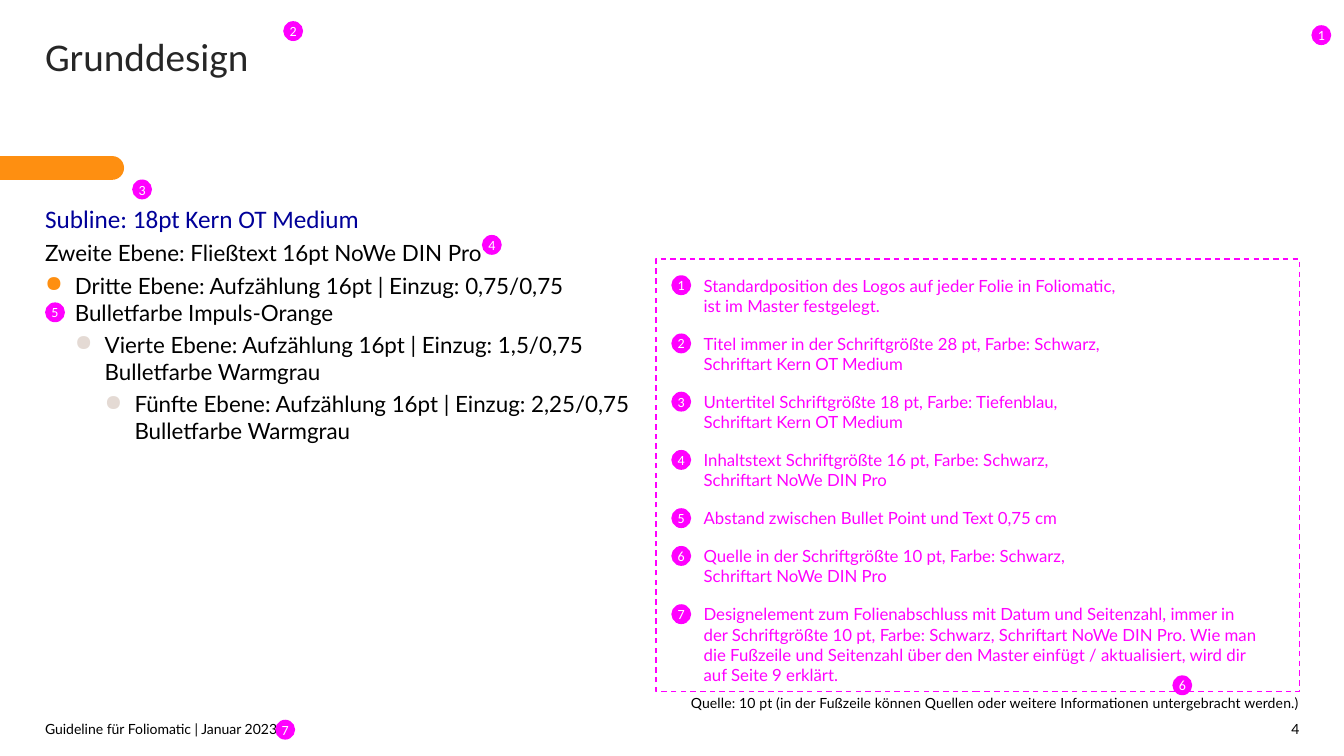
from lxml import etree
from pptx import Presentation
from pptx.dml.color import RGBColor
from pptx.enum.dml import MSO_LINE
from pptx.enum.shapes import MSO_SHAPE as Shape
from pptx.enum.text import MSO_ANCHOR as Anchor, PP_ALIGN as Align
from pptx.oxml.ns import qn
from pptx.util import Pt

COLORS = {"orange": "FE8F11", "warm_grey": "E4DAD4", "deep_blue": "000099",
          "title": "262626", "black": "000000", "white": "FFFFFF", "marker": "FF00FF"}
color = {name: RGBColor.from_string(value) for name, value in COLORS.items()}

prs = Presentation()
prs.slide_width, prs.slide_height = Pt(960), Pt(540)
slide = prs.slides.add_slide(prs.slide_layouts[6])


def add_text(box, lines, size, font, ink, anchor=Anchor.TOP, align=Align.LEFT):
    """Place text without margins; returns its paragraph."""
    area = slide.shapes.add_textbox(*[Pt(value) for value in box])
    frame = area.text_frame
    frame.word_wrap = True
    frame.vertical_anchor = anchor
    frame.margin_left = frame.margin_top = frame.margin_right = frame.margin_bottom = 0
    paragraph = frame.paragraphs[0]
    paragraph.text = lines.replace("\n", "\v")
    paragraph.alignment = align
    paragraph.font.size, paragraph.font.name = Pt(size), font
    paragraph.font.color.rgb = color[ink]
    return paragraph


def add_marker(number, left, top):
    """Numbered magenta dot."""
    dot = slide.shapes.add_shape(Shape.OVAL, Pt(left), Pt(top), Pt(14.2), Pt(14.2))
    dot.shadow.inherit = False
    dot.fill.solid()
    dot.fill.fore_color.rgb = color["marker"]
    dot.line.fill.background()
    frame = dot.text_frame
    frame.word_wrap = False
    frame.vertical_anchor = Anchor.MIDDLE
    frame.margin_left = frame.margin_top = frame.margin_right = frame.margin_bottom = 0
    label = frame.paragraphs[0]
    label.text = str(number)
    label.alignment = Align.CENTER
    label.font.size, label.font.name = Pt(10), "Calibri"
    label.font.color.rgb = color["white"]


# Orange bar: its two rounded corners are turned to the right
bar_length, bar_height, bar_top = 88.6, 17, 111.5
bar = slide.shapes.add_shape(
    Shape.ROUND_2_SAME_RECTANGLE, Pt((bar_length - bar_height) / 2),
    Pt(bar_top + (bar_height - bar_length) / 2), Pt(bar_height), Pt(bar_length))
bar.rotation = 90
bar.adjustments[0] = 0.5
bar.shadow.inherit = False
bar.fill.solid()
bar.fill.fore_color.rgb = color["orange"]
bar.line.fill.background()

# Title
add_text((32.2, 23, 692, 39.6), "Grunddesign", 28, "Calibri", "title")

# Text levels: text, size, font, ink, indent, bullet colour
levels = [
    ("Subline: 18pt Kern OT Medium", 18, "Calibri", "deep_blue", 0, None),
    ("Zweite Ebene: Fließtext 16pt NoWe DIN Pro", 16, "Lato", "black", 0, None),
    ("Dritte Ebene: Aufzählung 16pt | Einzug: 0,75/0,75\nBulletfarbe Impuls-Orange",
     16, "Lato", "black", 21.3, "orange"),
    ("Vierte Ebene: Aufzählung 16pt | Einzug: 1,5/0,75\nBulletfarbe Warmgrau",
     16, "Lato", "black", 42.6, "warm_grey"),
    ("Fünfte Ebene: Aufzählung 16pt | Einzug: 2,25/0,75\nBulletfarbe Warmgrau",
     16, "Lato", "black", 63.9, "warm_grey"),
]
body = slide.shapes.add_textbox(Pt(32.2), Pt(145.4), Pt(796), Pt(348.5)).text_frame
body.word_wrap = True
body.margin_left = body.margin_top = body.margin_right = body.margin_bottom = 0
for index, (lines, size, font, ink, indent, bullet_ink) in enumerate(levels):
    level = body.add_paragraph() if index else body.paragraphs[0]
    level.text = lines.replace("\n", "\v")
    level.space_after = Pt(4)
    if bullet_ink:
        properties = level._p.get_or_add_pPr()
        properties.set("marL", str(Pt(indent)))
        properties.set("indent", str(-Pt(21.3)))
        bullet_color = etree.SubElement(properties, qn("a:buClr"))
        etree.SubElement(bullet_color, qn("a:srgbClr"), val=COLORS[bullet_ink])
        etree.SubElement(properties, qn("a:buChar"), char="●")
    level.font.size, level.font.name = Pt(size), font
    level.font.color.rgb = color[ink]

# Footer and page number
add_text((32.2, 515.5, 796, 11.5), "Guideline für Foliomatic | Januar 2023",
         10, "Lato", "black", Anchor.BOTTOM)
add_text((905.8, 515.5, 22.3, 11.5), "4", 10, "Lato", "black", Anchor.BOTTOM, Align.RIGHT)

# Dashed frame of the legend
legend = slide.shapes.add_shape(Shape.RECTANGLE, Pt(468.7), Pt(185), Pt(459.4), Pt(308.9))
legend.shadow.inherit = False
legend.fill.background()
legend.line.color.rgb = color["marker"]
legend.line.width = Pt(1)
legend.line.dash_style = MSO_LINE.DASH

# Legend entries, stacked by their number of lines
notes = [
    "Standardposition des Logos auf jeder Folie in Foliomatic,\nist im Master festgelegt.",
    "Titel immer in der Schriftgrößte 28 pt, Farbe: Schwarz,\nSchriftart Kern OT Medium",
    "Untertitel Schriftgrößte 18 pt, Farbe: Tiefenblau,\nSchriftart Kern OT Medium",
    "Inhaltstext Schriftgrößte 16 pt, Farbe: Schwarz,\nSchriftart NoWe DIN Pro",
    "Abstand zwischen Bullet Point und Text 0,75 cm",
    "Quelle in der Schriftgrößte 10 pt, Farbe: Schwarz,\nSchriftart NoWe DIN Pro",
    "Designelement zum Folienabschluss mit Datum und Seitenzahl, immer in\n"
    "der Schriftgrößte 10 pt, Farbe: Schwarz, Schriftart NoWe DIN Pro. Wie man\n"
    "die Fußzeile und Seitenzahl über den Master einfügt / aktualisiert, wird dir\n"
    "auf Seite 9 erklärt.",
]
line_height, note_gap, note_top = 14.6, 12.4, 196.6
for number, note in enumerate(notes, 1):
    note_height = line_height * (note.count("\n") + 1)
    add_marker(number, 479.5, note_top)
    add_text((502.6, note_top, 424, note_height), note, 12, "Lato", "marker")
    note_top += note_height + note_gap

# Source line
source = add_text((32.2, 493.9, 895.7, 14.4),
                  "Quelle: 10 pt (in der Fußzeile können Quellen oder weitere "
                  "Informationen untergebracht werden.)",
                  10, "Lato", "black", Anchor.BOTTOM, Align.RIGHT)
source.runs[0]._r.get_or_add_rPr().set("spc", "10")

# Markers beside the explained elements
marker_places = [(936.7, 18), (202.3, 15.1), (94.4, 128.2), (344.2, 167.8),
                 (32.2, 216), (837.4, 482.4), (196.6, 514.1)]
for number, (left, top) in enumerate(marker_places, 1):
    add_marker(number, left, top)

prs.save("out.pptx")
